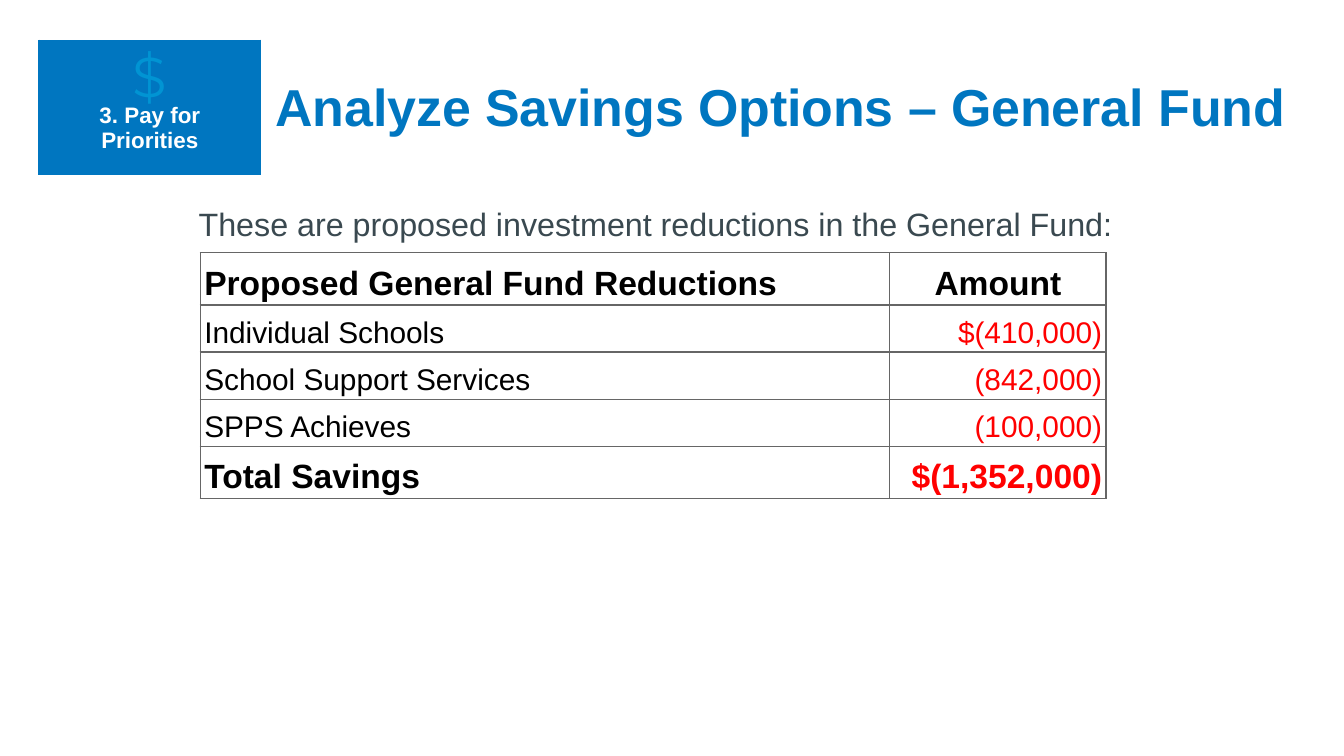
import dataclasses
import typing

import lxml.etree
import pptx
import pptx.dml.color
import pptx.enum.text
import pptx.oxml.ns
import pptx.util

Inches = pptx.util.Inches
ALIGN = pptx.enum.text.PP_ALIGN
ANCHOR = pptx.enum.text.MSO_ANCHOR

COLORS = {
    "blue": "0076C0",
    "light_blue": "0194D3",
    "white": "FFFFFF",
    "black": "000000",
    "red": "FF0000",
    "slate": "3A4950",
    "border": "666666",
}


@dataclasses.dataclass(frozen=True)
class Label:
    text: str
    left: float
    top: float
    width: float
    height: float
    size: float
    color: str
    font: str = "Arial"
    bold: bool = False
    align: typing.Any = ALIGN.LEFT
    inset_y: float = 0.1
    wrap: bool = True


@dataclasses.dataclass(frozen=True)
class Reduction:
    name: str
    amount: str
    height: float = 0.35
    size: float = 16
    bold: bool = False
    amount_color: str = "red"
    amount_align: typing.Any = ALIGN.RIGHT
    name_spacing: float = 1.15


LABELS = [
    Label("$", 0.3, 0.21, 1.63, 0.6, 30, "light_blue", font="Montserrat", align=ALIGN.CENTER),
    Label("Analyze Savings Options – General Fund", 1.95, 0.46, 7.74, 0.66, 27.75, "blue", bold=True),
    Label("These are proposed investment reductions in the General Fund:",
          1.38, 1.47, 7.07, 0.39, 17.25, "slate", inset_y=0.05, wrap=False),
]

REDUCTIONS = [
    Reduction("Proposed General Fund Reductions", "Amount", 0.39, 18, True, "black", ALIGN.CENTER),
    Reduction("Individual Schools", "$(410,000)"),
    Reduction("School Support Services", "(842,000)"),
    Reduction("SPPS Achieves", "(100,000)"),
    Reduction("Total Savings", "$(1,352,000)", 0.39, 18, True, name_spacing=1),
]


def rgb(name: str) -> pptx.dml.color.RGBColor:
    return pptx.dml.color.RGBColor.from_string(COLORS[name])


def write_text(frame, text: str, *, size: float, color: str, font: str = "Arial",
               bold: bool = False, align=ALIGN.LEFT, spacing: float = 1) -> None:
    """Write each line of the text as a paragraph of its own."""
    for index, line in enumerate(text.split("\n")):
        para = frame.add_paragraph() if index else frame.paragraphs[0]
        para.alignment = align
        para.line_spacing = spacing
        span = para.add_run()
        span.text = line
        span.font.name = font
        span.font.size = pptx.util.Pt(size)
        span.font.bold = bold
        span.font.color.rgb = rgb(color)


def set_margins(target, left: float, top: float, right: float, bottom: float) -> None:
    target.margin_left, target.margin_top = Inches(left), Inches(top)
    target.margin_right, target.margin_bottom = Inches(right), Inches(bottom)


def add_label(slide, label: Label) -> None:
    box = slide.shapes.add_textbox(Inches(label.left), Inches(label.top),
                                   Inches(label.width), Inches(label.height))
    frame = box.text_frame
    frame.word_wrap = label.wrap
    set_margins(frame, 0.1, label.inset_y, 0.1, label.inset_y)
    write_text(frame, label.text, size=label.size, color=label.color, font=label.font,
               bold=label.bold, align=label.align)


def add_plain_table(slide, left: float, top: float, widths: list[float], heights: list[float],
                    fill: str, border: str):
    """Add a table without banding, with one fill and one thin border for all cells."""
    frame = slide.shapes.add_table(len(heights), len(widths), Inches(left), Inches(top),
                                   Inches(sum(widths)), Inches(sum(heights)))
    table = frame.table
    table.first_row = table.horz_banding = False
    for column, width in zip(table.columns, widths):
        column.width = Inches(width)
    for row, height in zip(table.rows, heights):
        row.height = Inches(height)
    for cell in table.iter_cells():
        add_borders(cell, border)
        cell.fill.solid()
        cell.fill.fore_color.rgb = rgb(fill)
    return table


def add_borders(cell, color: str) -> None:
    qn = pptx.oxml.ns.qn
    properties = cell._tc.get_or_add_tcPr()
    for side in ("lnL", "lnR", "lnT", "lnB"):
        line = lxml.etree.SubElement(properties, qn(f"a:{side}"), w=str(pptx.util.Pt(0.75)))
        solid = lxml.etree.SubElement(line, qn("a:solidFill"))
        lxml.etree.SubElement(solid, qn("a:srgbClr"), val=COLORS[color])


def add_step_badge(slide) -> None:
    table = add_plain_table(slide, 0.29, 0.3, [1.65], [1], "blue", "blue")
    cell = table.cell(0, 0)
    set_margins(cell, 0.1, 0.47, 0.1, 0.1)
    write_text(cell.text_frame, "3. Pay for\nPriorities", size=12, color="white",
               bold=True, align=ALIGN.CENTER)


def add_reductions_table(slide) -> None:
    heights = [reduction.height for reduction in REDUCTIONS]
    table = add_plain_table(slide, 1.49, 1.88, [5.13, 1.61], heights, "white", "border")
    for cell in table.iter_cells():
        cell.vertical_anchor = ANCHOR.BOTTOM
        set_margins(cell, 0.03, 0.02, 0.03, 0.02)
    for index, reduction in enumerate(REDUCTIONS):
        write_text(table.cell(index, 0).text_frame, reduction.name, size=reduction.size,
                   color="black", bold=reduction.bold, spacing=reduction.name_spacing)
        write_text(table.cell(index, 1).text_frame, reduction.amount, size=reduction.size,
                   color=reduction.amount_color, bold=reduction.bold,
                   align=reduction.amount_align, spacing=1.15)


def main() -> None:
    deck = pptx.Presentation()
    deck.slide_width = Inches(10)
    deck.slide_height = deck.slide_width * 9 // 16
    slide = deck.slides.add_slide(deck.slide_layouts[6])
    add_step_badge(slide)
    for label in LABELS:
        add_label(slide, label)
    add_reductions_table(slide)
    deck.save("out.pptx")


if __name__ == "__main__":
    main()
